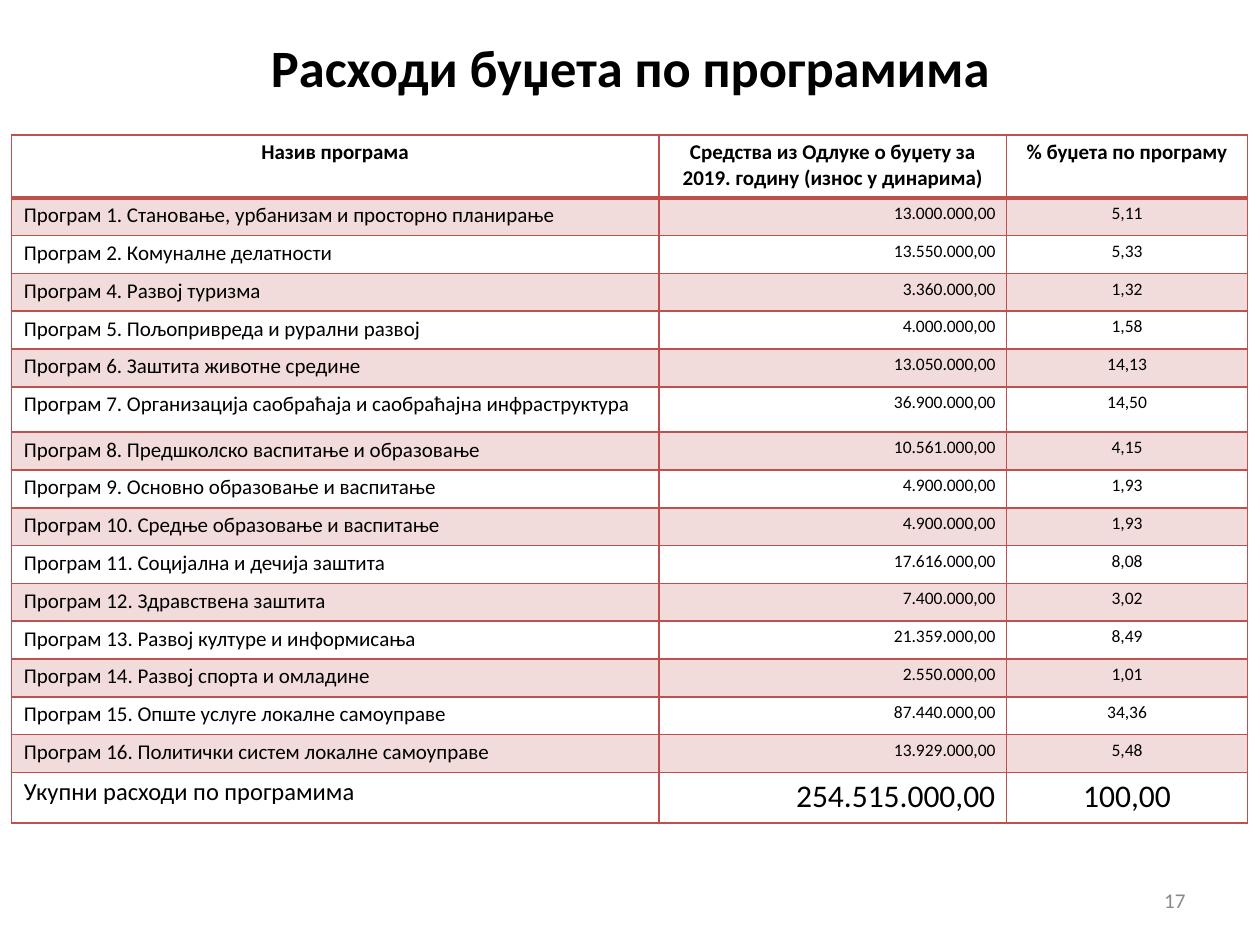
from lxml import etree
from pptx import Presentation
from pptx.dml.color import RGBColor
from pptx.enum import text
from pptx.oxml import ns
from pptx.util import Inches, Pt

BLACK = RGBColor(0, 0, 0)
GREY = RGBColor(0x88, 0x88, 0x88)
RED = RGBColor(0xC0, 0x50, 0x4D)
PINK = RGBColor(0xF2, 0xDC, 0xDB)
LEFT, MID, RIGHT = text.PP_ALIGN.LEFT, text.PP_ALIGN.CENTER, text.PP_ALIGN.RIGHT


def style(para, size, color=BLACK, bold=False, align=LEFT):
    para.font.name = "Calibri"
    para.font.size = Pt(size)
    para.font.bold = bold
    para.font.color.rgb = color
    para.alignment = align


def edge(cell, side, width):
    line = etree.SubElement(cell._tc.get_or_add_tcPr(), ns.qn("a:ln" + side), w=str(Pt(width)))
    fill = etree.SubElement(line, ns.qn("a:solidFill"))
    etree.SubElement(fill, ns.qn("a:srgbClr"), val=str(RED))


heads = ("Назив програма",
         "Средства из Одлуке о буџету за 2019. годину (износ у динарима)",
         "% буџета по програму")
items = [
    ("Програм 1. Становање, урбанизам и просторно планирање", "13.000.000,00", "5,11"),
    ("Програм 2. Комуналне делатности", "13.550.000,00", "5,33"),
    ("Програм 4. Развој туризма", "3.360.000,00", "1,32"),
    ("Програм 5. Пољопривреда и рурални развој", "4.000.000,00", "1,58"),
    ("Програм 6. Заштита животне средине", "13.050.000,00", "14,13"),
    ("Програм 7. Организација саобраћаја и саобраћајна инфраструктура", "36.900.000,00", "14,50"),
    ("Програм 8. Предшколско васпитање и образовање", "10.561.000,00", "4,15"),
    ("Програм 9. Основно образовање и васпитање", "4.900.000,00", "1,93"),
    ("Програм 10. Средње образовање и васпитање", "4.900.000,00", "1,93"),
    ("Програм 11. Социјална и дечија заштита", "17.616.000,00", "8,08"),
    ("Програм 12. Здравствена заштита", "7.400.000,00", "3,02"),
    ("Програм 13. Развој културе и информисања", "21.359.000,00", "8,49"),
    ("Програм 14. Развој спорта и омладине", "2.550.000,00", "1,01"),
    ("Програм 15. Опште услуге локалне самоуправе", "87.440.000,00", "34,36"),
    ("Програм 16. Политички систем локалне самоуправе", "13.929.000,00", "5,48"),
]
total = ("Укупни расходи по програмима", "254.515.000,00", "100,00")
rows = [heads, *items, total]
last = len(rows) - 1
highs = [0.5] + [0.3] * len(items) + [0.4]
highs[6] = 0.36
wides = (5.14, 2.76, 1.91)

deck = Presentation()
deck.slide_width, deck.slide_height = Inches(10), Inches(7.5)
slide = deck.slides.add_slide(deck.slide_layouts[5])

title = slide.shapes.title
title.left, title.top = Inches(2.14), Inches(0.26)
title.width, title.height = Inches(5.73), Inches(0.53)
frame = title.text_frame
frame.text = "Расходи буџета по програмима"
frame.margin_left = frame.margin_right = frame.margin_top = frame.margin_bottom = 0
frame.word_wrap = False
style(frame.paragraphs[0], 30, bold=True, align=MID)

table = slide.shapes.add_table(len(rows), len(wides), Inches(0.09), Inches(1.07),
                               Inches(sum(wides)), Inches(sum(highs))).table
table.first_row = table.horz_banding = False
for col, wide in zip(table.columns, wides):
    col.width = Inches(wide)

for r, row in enumerate(rows):
    table.rows[r].height = Inches(highs[r])
    if r == 0:
        sizes, aligns, pads = (12, 12, 12), (MID, MID, MID), (0, 0.15, 0)
    else:
        sizes = (14, 18, 18) if r == last else (12, 10, 10)
        aligns, pads = (LEFT, RIGHT, MID), (0.1, 0.09, 0)
    for c, words in enumerate(row):
        cell = table.cell(r, c)
        cell.text = words
        cell.margin_left = cell.margin_right = Inches(pads[c])
        cell.margin_top, cell.margin_bottom = Inches(0.04), 0
        para = cell.text_frame.paragraphs[0]
        style(para, sizes[c], bold=r == 0, align=aligns[c])
        para.space_before = Pt(3)
        for side in "LRTB":
            thick = (r, side) in ((0, "B"), (1, "T"))
            edge(cell, side, 2.25 if thick else 1)
        if r % 2 and r < last:
            cell.fill.solid()
            cell.fill.fore_color.rgb = PINK
        else:
            cell.fill.background()

page = slide.shapes.add_textbox(Inches(9.21), Inches(7.07), Inches(0.22), Inches(0.19))
frame = page.text_frame
frame.text = "17"
frame.word_wrap = True
frame.margin_left = Inches(0.03)
frame.margin_right = frame.margin_top = frame.margin_bottom = 0
style(frame.paragraphs[0], 12, GREY)
frame.paragraphs[0].line_spacing = Pt(12.4)

deck.save("out.pptx")
